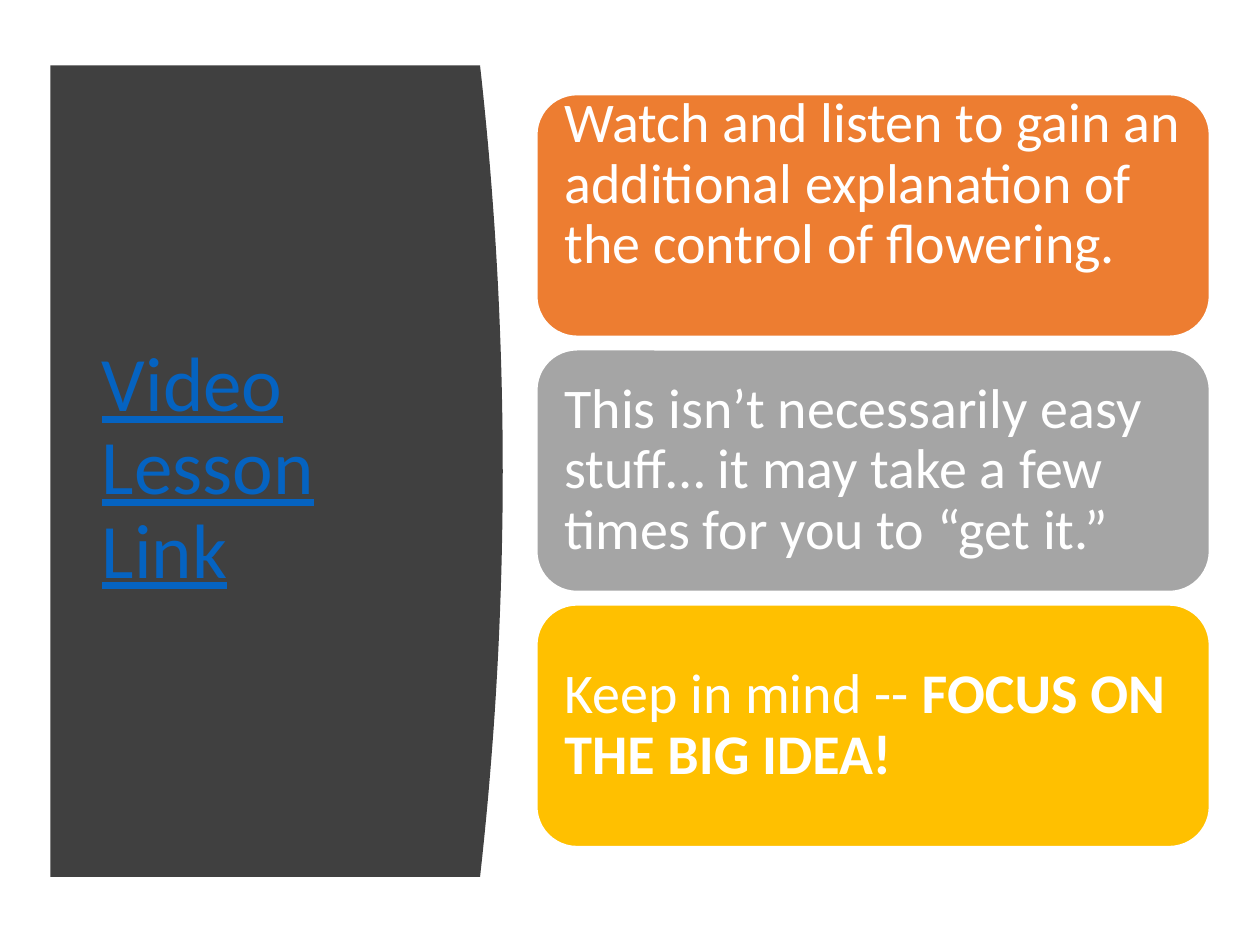
from pptx import Presentation
from pptx.dml.color import RGBColor
from pptx.enum.shapes import MSO_SHAPE
from pptx.enum.text import MSO_ANCHOR, PP_ALIGN
from pptx.util import Inches, Pt

ROUNDED = MSO_SHAPE.ROUNDED_RECTANGLE
MIDDLE = MSO_ANCHOR.MIDDLE
LEFT = PP_ALIGN.LEFT

# Content: card fill, text runs as (text, bold), bottom inset
TITLE = [("Video Lesson Link", False)]
CARDS = [
    ("ED7D31", [("Watch and listen to gain an additional explanation "
                 "of the control of flowering.", False)], 0.61),
    ("A5A5A5", [("This isn’t necessarily easy stuff… it may take a few "
                 "times for you to “get it.”", False)], 0.13),
    ("FFC000", [("Keep in mind -- ", False),
                ("FOCUS ON THE BIG IDEA!", True)], 0.13),
]

# Layout in inches
PANEL_LEFT, PANEL_TOP, PANEL_BOTTOM = 0.4, 0.52, 6.96
PANEL_EDGE, PANEL_BULGE, CURVE_STEPS = 3.81, 0.18, 40
CARD_LEFT, CARD_TOP, CARD_WIDTH, CARD_HEIGHT = 4.26, 0.75, 5.34, 1.92
CARD_PITCH, TEXT_MARGIN = 2.025, 0.09


def color(hex_string):
    return RGBColor.from_string(hex_string)


def paint(shape, fill, line=None):
    shape.shadow.inherit = False
    shape.fill.solid()
    shape.fill.fore_color.rgb = color(fill)
    if line:
        shape.line.color.rgb = color(line)
        shape.line.width = Pt(1)
    else:
        shape.line.fill.background()


def add_text(slide, runs, box, *, size, font_color, underline=False,
             insets=(0.1, 0.05, 0.1, 0.05)):
    shape = slide.shapes.add_textbox(*map(Inches, box))
    frame = shape.text_frame
    frame.word_wrap = True
    frame.vertical_anchor = MIDDLE
    (frame.margin_left, frame.margin_top,
     frame.margin_right, frame.margin_bottom) = map(Inches, insets)
    paragraph = frame.paragraphs[0]
    paragraph.alignment = LEFT
    paragraph.line_spacing = 0.9
    for text, bold in runs:
        run = paragraph.add_run()
        run.text = text
        run.font.name = "Calibri"
        run.font.size = Pt(size)
        run.font.bold = bold
        run.font.underline = underline
        run.font.color.rgb = color(font_color)


def add_panel(slide):
    """Dark panel whose right edge is a shallow parabola."""
    middle = (PANEL_TOP + PANEL_BOTTOM) / 2
    half = (PANEL_BOTTOM - PANEL_TOP) / 2
    points = []
    for step in range(CURVE_STEPS + 1):
        offset = 2 * step / CURVE_STEPS - 1
        points.append((Inches(PANEL_EDGE + PANEL_BULGE * (1 - offset ** 2)),
                       Inches(middle + half * offset)))
    points.append((Inches(PANEL_LEFT), Inches(PANEL_BOTTOM)))
    builder = slide.shapes.build_freeform(Inches(PANEL_LEFT), Inches(PANEL_TOP))
    builder.add_line_segments(points, close=True)
    paint(builder.convert_to_shape(), "404040")


def main():
    presentation = Presentation()
    presentation.slide_width = Inches(10)
    presentation.slide_height = Inches(7.5)
    slide = presentation.slides.add_slide(presentation.slide_layouts[6])

    # Title panel
    add_panel(slide)
    add_text(slide, TITLE, (0.71, 1.11, 2.8, 5.24), size=44,
             font_color="0563C1", underline=True)

    # Stacked cards
    for index, (fill, runs, bottom_inset) in enumerate(CARDS):
        top = CARD_TOP + index * CARD_PITCH
        card = slide.shapes.add_shape(ROUNDED, *map(
            Inches, (CARD_LEFT, top, CARD_WIDTH, CARD_HEIGHT)))
        paint(card, fill, line="FFFFFF")
        text_box = (CARD_LEFT + TEXT_MARGIN, top + TEXT_MARGIN,
                    CARD_WIDTH - 2 * TEXT_MARGIN, CARD_HEIGHT - 2 * TEXT_MARGIN)
        add_text(slide, runs, text_box, size=32, font_color="FFFFFF",
                 insets=(0.13, 0.13, 0.13, bottom_inset))

    presentation.save("out.pptx")


if __name__ == "__main__":
    main()
